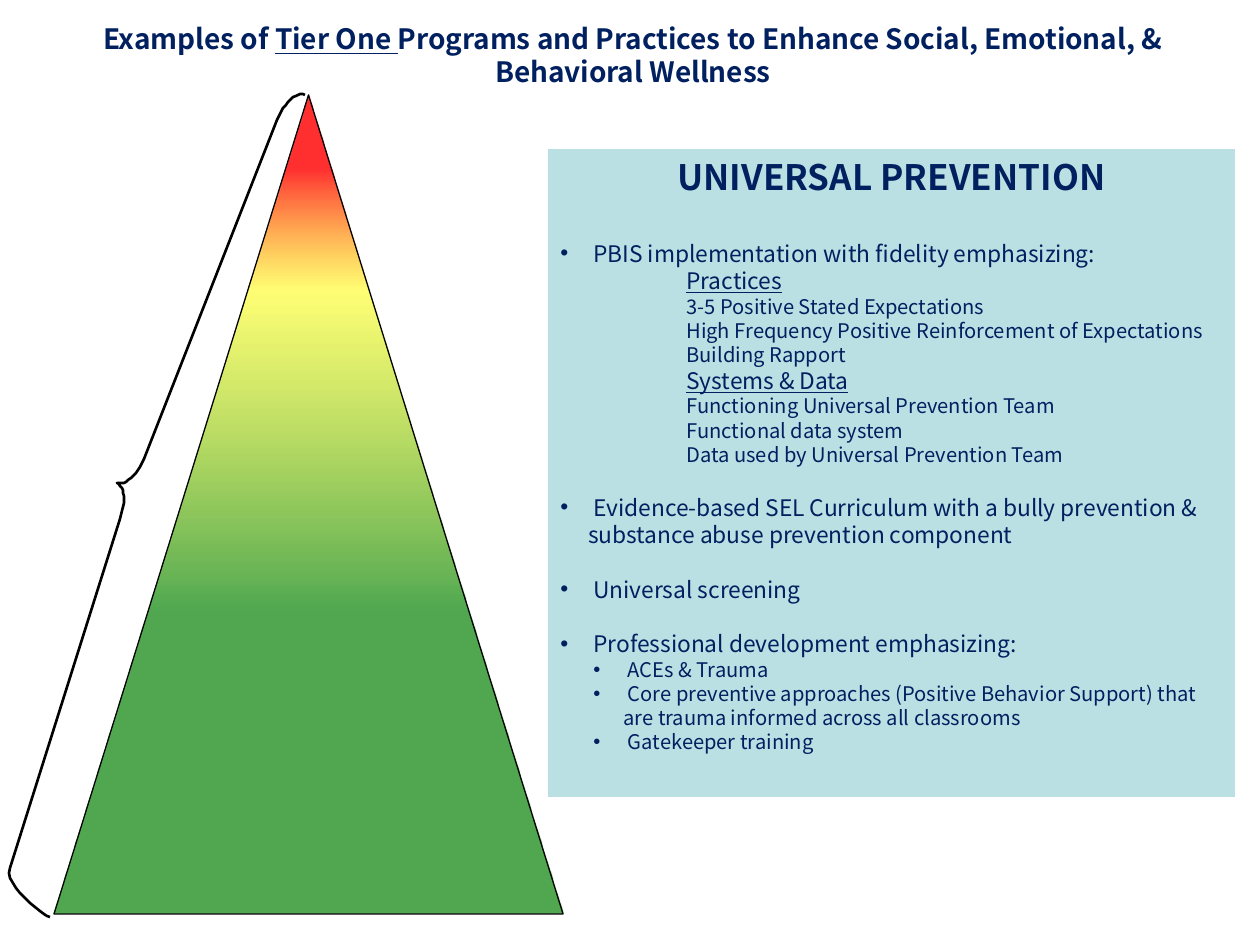
from typing import NamedTuple

from lxml.etree import SubElement
from pptx import Presentation
from pptx.dml.color import RGBColor
from pptx.enum.shapes import MSO_SHAPE as Shape
from pptx.enum.text import MSO_ANCHOR as Anchor, PP_ALIGN as Align
from pptx.oxml import parse_xml
from pptx.oxml.ns import nsdecls, qn
from pptx.util import Pt

PX = 914400 / 126
FONT, NAVY = "Noto Sans CJK SC", "002060"


class Level(NamedTuple):
    size: float
    left: int
    hang: int = 0
    underline: bool = False


class Line(NamedTuple):
    text: str
    level: Level
    gap: float = 0


class Stop(NamedTuple):
    pos: int
    color: str
    alpha: int


MAIN = Level(13, 28, 28)
SUB = Level(11.5, 63, 30)
HEAD = Level(13, 126, underline=True)
ITEM = Level(11.5, 126)

LINES = [
    Line(" PBIS implementation with fidelity emphasizing:", MAIN, 24),
    Line("Practices", HEAD),
    Line("3-5 Positive Stated Expectations", ITEM),
    Line("High Frequency Positive Reinforcement of Expectations", ITEM),
    Line("Building Rapport", ITEM),
    Line("Systems & Data", HEAD),
    Line("Functioning Universal Prevention Team", ITEM),
    Line("Functional data system", ITEM),
    Line("Data used by Universal Prevention Team", ITEM),
    Line(" Evidence-based SEL Curriculum with a bully prevention & "
         "substance abuse prevention component", MAIN, 15.6),
    Line(" Universal screening", MAIN, 15.6),
    Line(" Professional development emphasizing:", MAIN, 15.6),
    Line(" ACEs & Trauma", SUB),
    Line(" Core preventive approaches (Positive Behavior Support) that "
         "are trauma informed across all classrooms", SUB),
    Line(" Gatekeeper training", SUB),
]
STOPS = [Stop(9, "FF0000", 81), Stop(24, "FFFF00", 54), Stop(63, "008000", 68)]

# Each bend is a cubic curve; straight arms join one bend to the next
BENDS = [
    [(50, 917), (42, 914), (4, 886), (10, 868)],
    [(120, 519), (126, 503), (125, 486), (117, 483)],
    [(117, 483), (125, 486), (137, 475), (144, 459)],
    [(277, 120), (285, 102), (296, 91), (305, 95)],
]


def emu(px: float) -> int:
    return round(px * PX)


def rgb(color: str) -> RGBColor:
    return RGBColor.from_string(color)


def style(para, size: float, bold: bool = False) -> None:
    font = para.font
    font.name, font.size, font.bold = FONT, Pt(size), bold
    font.color.rgb = rgb(NAVY)


def outline(shape, width: float) -> None:
    shape.shadow.inherit = False
    shape.line.color.rgb = rgb("000000")
    shape.line.width = Pt(width)


def blend(shape, stops: list[Stop]) -> None:
    """Fill from top to bottom with half-clear colours."""
    marks = "".join(
        f'<a:gs pos="{s.pos * 1000}"><a:srgbClr val="{s.color}">'
        f'<a:alpha val="{s.alpha * 1000}"/></a:srgbClr></a:gs>' for s in stops)
    fill = parse_xml(f'<a:gradFill {nsdecls("a")} rotWithShape="1"><a:gsLst>{marks}'
                     '</a:gsLst><a:lin ang="5400000" scaled="1"/></a:gradFill>')
    shape._element.spPr.find(qn("a:prstGeom")).addnext(fill)


def curve(bend: list[tuple[int, int]], steps: int = 12) -> list[tuple[float, float]]:
    points = []
    for i in range(steps + 1):
        t = i / steps
        parts = ((1 - t) ** 3, 3 * t * (1 - t) ** 2, 3 * t * t * (1 - t), t ** 3)
        points.append(tuple(sum(w * p[axis] for w, p in zip(parts, bend))
                            for axis in (0, 1)))
    return points


def write(frame, line: Line) -> None:
    para, level = frame.add_paragraph(), line.level
    para.text = line.text
    para.alignment = Align.LEFT
    para.space_before = Pt(line.gap)
    props = para._p.get_or_add_pPr()
    props.set("marL", str(emu(level.left)))
    props.set("indent", str(-emu(level.hang)))
    if level.hang:
        SubElement(props, qn("a:buFont"), typeface="Arial")
        SubElement(props, qn("a:buChar"), char="•")
    style(para, level.size)
    if level.underline:
        para.runs[0].font.underline = True


def main() -> None:
    deck = Presentation()
    deck.slide_width, deck.slide_height = emu(1260), emu(945)
    shapes = deck.slides.add_slide(deck.slide_layouts[6]).shapes

    # Pyramid
    cone = shapes.add_shape(Shape.ISOSCELES_TRIANGLE,
                            *map(emu, (54, 95, 509, 819)))
    blend(cone, STOPS)
    outline(cone, 0.75)

    # Brace along the left side
    points = [p for bend in BENDS for p in curve(bend)]
    pen = shapes.build_freeform(*points[0], scale=PX)
    pen.add_line_segments(points[1:], close=False)
    brace = pen.convert_to_shape()
    brace.fill.background()
    outline(brace, 1.5)

    # Panel
    panel = shapes.add_shape(Shape.RECTANGLE, *map(emu, (548, 149, 687, 648)))
    panel.shadow.inherit = False
    panel.fill.solid()
    panel.fill.fore_color.rgb = rgb("BBE0E3")
    panel.line.fill.background()
    frame = panel.text_frame
    frame.word_wrap, frame.vertical_anchor = True, Anchor.TOP
    head = frame.paragraphs[0]
    head.text, head.alignment = "UNIVERSAL PREVENTION", Align.CENTER
    style(head, 20, True)
    for line in LINES:
        write(frame, line)

    # Title
    frame = shapes.add_textbox(*map(emu, (86, 15, 1094, 81))).text_frame
    frame.word_wrap = True
    title = frame.paragraphs[0]
    title.alignment = Align.CENTER
    for text in ("Examples of ", "Tier One ", "Programs and Practices to Enhance "
                 "Social, Emotional, & Behavioral Wellness"):
        title.add_run().text = text
    title.runs[1].font.underline = True
    style(title, 16, True)

    deck.save("out.pptx")


if __name__ == "__main__":
    main()
